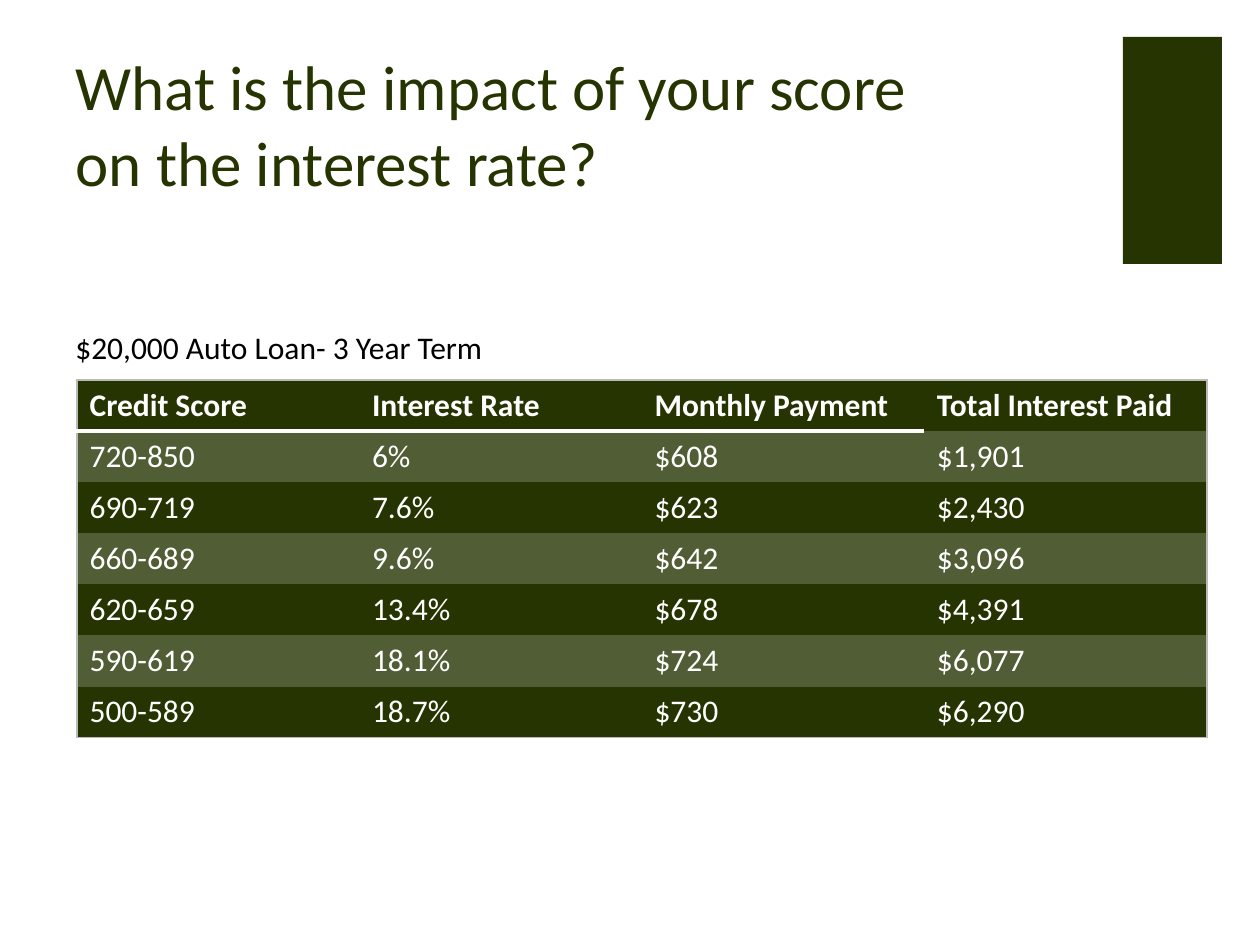
from pptx import Presentation
from pptx import util as u
from pptx.dml.color import RGBColor
from pptx.enum import shapes, text
from pptx.oxml import parse_xml
from pptx.oxml.ns import nsdecls, qn

OLIVE = RGBColor(0x26, 0x34, 0x01)
MOSS = RGBColor(0x51, 0x5D, 0x34)
FRAME_GREY = RGBColor(0xBA, 0xBB, 0xB9)
WHITE = RGBColor(0xFF, 0xFF, 0xFF)
BLACK = RGBColor(0x00, 0x00, 0x00)

PX_PER_INCH = 126
PLAIN_TABLE_STYLE = "{2D5ABB26-0587-4C30-8999-92F81FD0307C}"

HEADINGS = ["Credit Score", "Interest Rate", "Monthly Payment", "Total Interest Paid"]
RATES = [
    ["720-850", "6%", "$608", "$1,901"],
    ["690-719", "7.6%", "$623", "$2,430"],
    ["660-689", "9.6%", "$642", "$3,096"],
    ["620-659", "13.4%", "$678", "$4,391"],
    ["590-619", "18.1%", "$724", "$6,077"],
    ["500-589", "18.7%", "$730", "$6,290"],
]


def px(length):
    return u.Emu(round(length * 914400 / PX_PER_INCH))


def write(frame, words, size=18, color=BLACK, bold=False, font="Calibri"):
    paragraph = frame.paragraphs[0]
    paragraph.alignment = text.PP_ALIGN.LEFT
    run = paragraph.add_run()
    run.text = words
    run.font.name = font
    run.font.size = u.Pt(size)
    run.font.bold = bold
    run.font.color.rgb = color


def add_border(cell, side, color, width):
    cell._tc.get_or_add_tcPr().append(parse_xml(
        f'<a:ln{side} {nsdecls("a")} w="{u.Pt(width)}"><a:solidFill>'
        f'<a:srgbClr val="{color}"/></a:solidFill></a:ln{side}>'))


class LoanSlide:
    def __init__(self, deck):
        self.slide = deck.slides.add_slide(deck.slide_layouts[5])

    def title(self, words, left, top, width, height):
        heading = self.slide.shapes.title
        heading.left, heading.top = px(left), px(top)
        heading.width, heading.height = px(width), px(height)
        frame = heading.text_frame
        frame.auto_size = text.MSO_AUTO_SIZE.NONE
        frame.vertical_anchor = text.MSO_ANCHOR.BOTTOM
        write(frame, words, size=36, color=OLIVE)

    def block(self, left, top, width, height):
        accent = self.slide.shapes.add_shape(
            shapes.MSO_SHAPE.RECTANGLE, px(left), px(top), px(width), px(height))
        accent.shadow.inherit = False
        accent.fill.solid()
        accent.fill.fore_color.rgb = OLIVE
        accent.line.fill.background()

    def caption(self, words, left, top, width, height):
        frame = self.slide.shapes.add_textbox(
            px(left), px(top), px(width), px(height)).text_frame
        frame.word_wrap = True
        frame.auto_size = text.MSO_AUTO_SIZE.SHAPE_TO_FIT_TEXT
        write(frame, words)

    def table(self, rows, left, top, width, row_height):
        last_row, last_col = len(rows) - 1, len(rows[0]) - 1
        holder = self.slide.shapes.add_table(
            len(rows), len(rows[0]), px(left), px(top), px(width),
            px(row_height * len(rows)))
        holder.element.find(".//" + qn("a:tableStyleId")).text = PLAIN_TABLE_STYLE
        grid = holder.table
        grid.horz_banding = False
        for row in grid.rows:
            row.height = px(row_height)
        for r, values in enumerate(rows):
            for c, value in enumerate(values):
                cell = grid.cell(r, c)
                # Outer frame, in the order the file format expects
                outer = {"L": c == 0, "R": c == last_col,
                         "T": r == 0, "B": r == last_row}
                for side, on_edge in outer.items():
                    if on_edge:
                        add_border(cell, side, FRAME_GREY, 1)
                # The header rule stops before the last column
                if r == 0 and c < last_col:
                    add_border(cell, "B", WHITE, 2.5)
                cell.fill.solid()
                cell.fill.fore_color.rgb = MOSS if r % 2 else OLIVE
                write(cell.text_frame, value, color=WHITE, bold=r == 0)


def main():
    deck = Presentation()
    deck.slide_width, deck.slide_height = u.Inches(10), u.Inches(7.5)
    page = LoanSlide(deck)

    # Heading and corner accent
    page.block(1123, 37, 99, 227)
    page.title("What is the impact of your score on the interest rate?",
               63, 48, 897, 157)

    # Loan table with its caption
    page.table([HEADINGS] + RATES, 77, 380, 1130, 51)
    page.caption("$20,000 Auto Loan- 3 Year Term", 63, 322, 1057, 50)

    deck.save("out.pptx")


if __name__ == "__main__":
    main()
